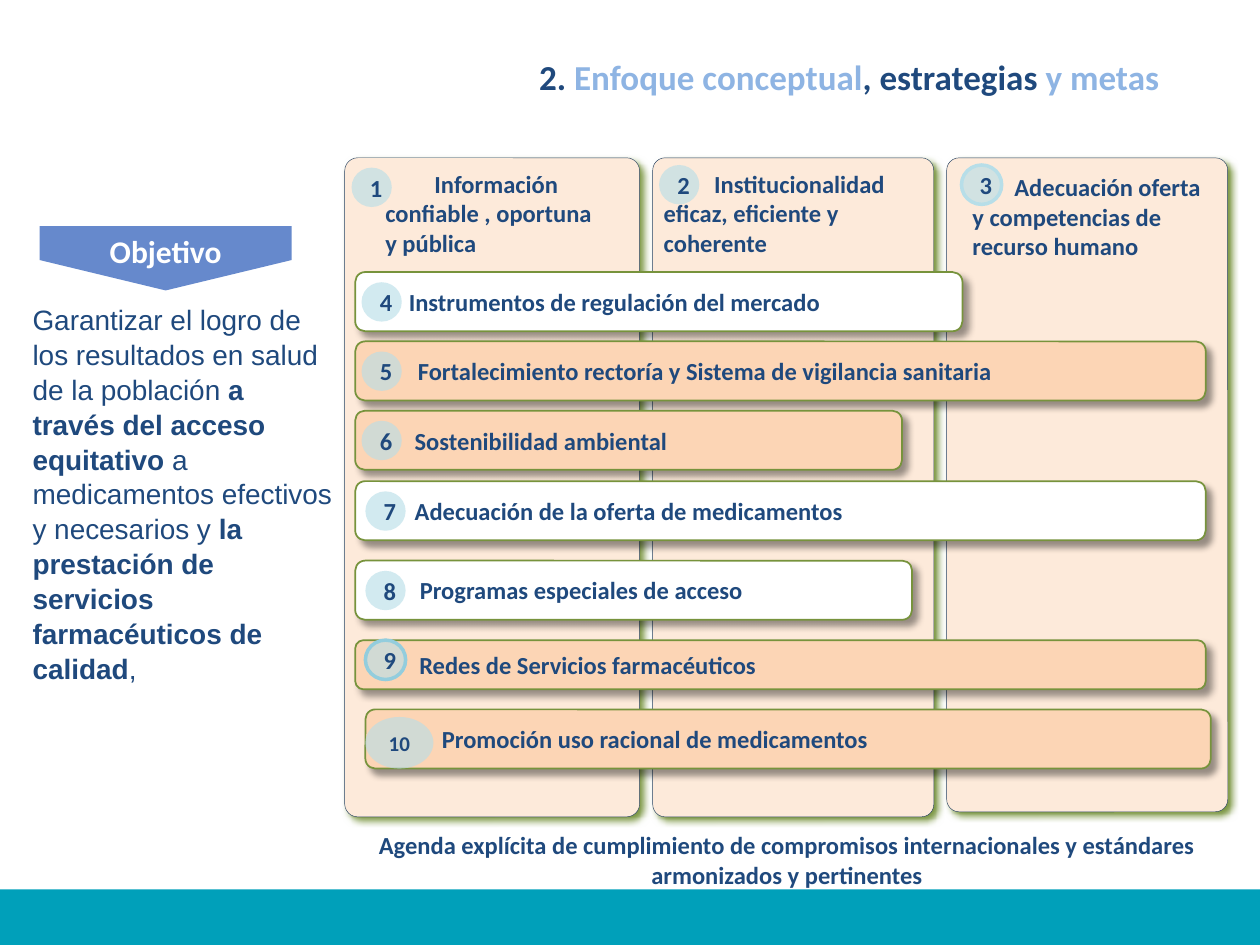
import pptx
import pptx.dml.color
import pptx.enum.shapes
import pptx.enum.text
import pptx.oxml
import pptx.oxml.ns
import pptx.util
from lxml import etree

Pt = pptx.util.Pt
SHAPE = pptx.enum.shapes.MSO_SHAPE
ALIGN = pptx.enum.text.PP_ALIGN
ANCHOR = pptx.enum.text.MSO_ANCHOR

THEME = {
    "navy": "1F497D", "pale_blue": "8EB4E3", "white": "FFFFFF", "teal": "00A0BA",
    "column": "FDEADA", "column_line": "254061", "orange": "FCD5B5", "green": "77933C",
    "badge": "B7DEE8", "badge_ring": "93CDDD", "arrow": "6689CC", "black": "000000",
    "font": "Calibri", "body_font": "Arial",
    "title": 20, "label": 14, "small": 12, "body": 16, "heading": 18,
}

TITLE = [("2. ", "navy", True), ("Enfoque conceptual", "pale_blue", True),
         (", estrategias", "navy", True), (" y metas", "pale_blue", True)]
HEADING = "Objetivo"
OBJECTIVE = [
    ("Garantizar el logro de los resultados en salud de la población ", "navy", False),
    ("a través del acceso equitativo ", "navy", True),
    ("a medicamentos efectivos y necesarios y ", "navy", False),
    ("la prestación de servicios farmacéuticos de calidad", "navy", True),
    (",", "navy", False),
]
AGENDA = ("Agenda explícita de cumplimiento de compromisos internacionales "
          "y estándares armonizados y pertinentes")

COLUMN_TOP = 90.2
# column left, width, height; text, its box, first-line indent; badge place, ring
COLUMNS = [
    (541, 160.6, 373.7, "Adecuación oferta y competencias de recurso humano",
     (548.6, 95, 149, 61.9), 24, "3", (549.4, 94.3), "badge"),
    (373, 160.6, 376.6, "Institucionalidad eficaz, eficiente y coherente",
     (372.2, 92.9, 169.2, 61.9), 28.8, "2", (376.6, 94.3), None),
    (197, 168.5, 376.6, "Información confiable , oportuna y pública",
     (213.1, 92.9, 132.5, 61.9), 28.1, "1", (200.9, 95.8), None),
]
# bar box, colour, text, text left; badge number, left, offset from bar top, ring
BARS = [
    ((203, 155.5, 347, 33.8), "white", "Instrumentos de regulación del mercado",
     233.7, "4", 206.6, 5.8, None),
    ((203, 195.1, 486, 33.8), "orange",
     "Fortalecimiento rectoría y Sistema de vigilancia sanitaria",
     238.9, "5", 206.6, 5.8, None),
    ((203, 234.7, 312.5, 33.8), "orange", "Sostenibilidad ambiental",
     237.1, "6", 206.6, 5.8, None),
    ((203, 275, 486, 33.8), "white", "Adecuación de la oferta de medicamentos",
     237.1, "7", 208.8, 5.8, None),
    ((203, 320.4, 318.2, 33.8), "white", "Programas especiales de acceso",
     240, "8", 208.8, 5.8, None),
    ((203, 365.8, 486, 28.1), "orange", "Redes de Servicios farmacéuticos",
     240, "9", 208.8, 0, "badge_ring"),
    ((208.8, 405.4, 483.1, 33.8), "orange", "Promoción uso racional de medicamentos",
     252.6, "10", 208.8, 4.3, None),
]
BADGE_SIZE = (23, 22.5)
WIDE_BADGE_SIZE = (38.9, 29.5)
INSETS = (7.2, 3.6, 7.2, 3.6)
CORNER_INSET = 1.65


def rgb(name):
    return pptx.dml.color.RGBColor.from_string(THEME[name])


def write(shape, text, size="label", font="font", color="navy", bold=True,
          align=ALIGN.LEFT, anchor=ANCHOR.TOP, insets=INSETS, left=0, first=0,
          line_spacing=None, wrap=True):
    """Fill a shape with one paragraph: a string, or (text, colour, bold) runs."""
    frame = shape.text_frame
    frame.word_wrap = wrap
    frame.auto_size = pptx.enum.text.MSO_AUTO_SIZE.NONE
    frame.vertical_anchor = anchor
    frame.margin_left, frame.margin_top, frame.margin_right, frame.margin_bottom = map(Pt, insets)
    paragraph = frame.paragraphs[0]
    paragraph.alignment = align
    paragraph.line_spacing = line_spacing
    if left or first:
        properties = paragraph._p.get_or_add_pPr()
        properties.set("marL", str(Pt(left)))
        properties.set("indent", str(Pt(first)))
    runs = [(text, color, bold)] if isinstance(text, str) else text
    for content, run_color, run_bold in runs:
        run = paragraph.add_run()
        run.text = content
        run.font.name = THEME[font]
        run.font.size = Pt(THEME[size])
        run.font.bold = run_bold
        run.font.color.rgb = rgb(run_color)


def add_shape(slide, kind, box, fill, line=None, line_width=1.0):
    shape = slide.shapes.add_shape(kind, *map(Pt, box))
    shape.shadow.inherit = False
    shape.fill.solid()
    shape.fill.fore_color.rgb = rgb(fill)
    if line:
        shape.line.color.rgb = rgb(line)
        shape.line.width = Pt(line_width)
    else:
        shape.line.fill.background()
    return shape


def add_text(slide, box, text, **text_format):
    write(slide.shapes.add_textbox(*map(Pt, box)), text, **text_format)


def set_alpha(color_element, percent):
    alpha = etree.SubElement(color_element, pptx.oxml.ns.qn("a:alpha"))
    alpha.set("val", str(percent * 1000))


def add_shadow(shape, color, alpha, distance):
    qn = pptx.oxml.ns.qn
    effects = shape._element.spPr.find(qn("a:effectLst"))
    shadow = etree.SubElement(effects, qn("a:outerShdw"), blurRad=str(Pt(4)),
                              dist=str(Pt(distance)), dir="2700000",
                              algn="tl", rotWithShape="0")
    set_alpha(etree.SubElement(shadow, qn("a:srgbClr"), val=THEME[color]), alpha)


def add_badge(slide, number, left, top, ring):
    wide = len(number) > 1
    size = WIDE_BADGE_SIZE if wide else BADGE_SIZE
    badge = add_shape(slide, SHAPE.OVAL, (left, top, *size), "badge", ring, 2)
    set_alpha(badge._element.spPr.find(".//" + pptx.oxml.ns.qn("a:srgbClr")), 62)
    write(badge, number, size="small" if wide else "label", align=ALIGN.CENTER,
          anchor=ANCHOR.MIDDLE, insets=(0 if wide else 5, 0, 0, 0))


def add_columns(slide):
    for left, width, height, *_ in COLUMNS:
        column = add_shape(slide, SHAPE.ROUNDED_RECTANGLE, (left, COLUMN_TOP, width, height),
                           "column", "column_line", 0.25)
        column.adjustments[0] = 0.044
        add_shadow(column, "green", 97, 3)
    for *_, text, box, indent, number, place, ring in COLUMNS:
        add_text(slide, box, text, first=indent)
        add_badge(slide, number, *place, ring)


def add_bars(slide):
    for box, color, text, text_left, number, badge_left, offset, ring in BARS:
        bar = add_shape(slide, SHAPE.ROUNDED_RECTANGLE, box, color, "green")
        add_shadow(bar, "black", 40, 4)
        write(bar, text, anchor=ANCHOR.MIDDLE,
              left=text_left - box[0] - INSETS[0] - CORNER_INSET)
        add_badge(slide, number, badge_left, box[1] + offset, ring)


def add_objective(slide):
    add_text(slide, (11.5, 168.5, 185.8, 281.5), OBJECTIVE, size="body",
             font="body_font", line_spacing=1.04)
    arrow = add_shape(slide, SHAPE.PENTAGON, (76.3, 75.6, 36.7, 144), "arrow")
    arrow.adjustments[0] = 0.473
    arrow.rotation = 90
    write(arrow, HEADING, size="heading", color="white", align=ALIGN.CENTER,
          anchor=ANCHOR.MIDDLE, wrap=False)
    arrow.text_frame._txBody.bodyPr.set("vert", "vert270")


def main():
    presentation = pptx.Presentation()
    presentation.slide_width, presentation.slide_height = Pt(720), Pt(540)
    slide = presentation.slides.add_slide(presentation.slide_layouts[5])
    title = slide.shapes.title
    title.left, title.top, title.width, title.height = map(Pt, (253.4, 28.1, 416.2, 31.7))
    write(title, TITLE, size="title", align=ALIGN.RIGHT, anchor=ANCHOR.MIDDLE)
    add_shape(slide, SHAPE.RECTANGLE, (0, 508.3, 720, 31.7), "teal")
    add_columns(slide)
    add_bars(slide)
    add_text(slide, (196.6, 470.9, 506.2, 41), AGENDA, align=ALIGN.CENTER)
    add_objective(slide)
    presentation.save("out.pptx")


if __name__ == "__main__":
    main()
